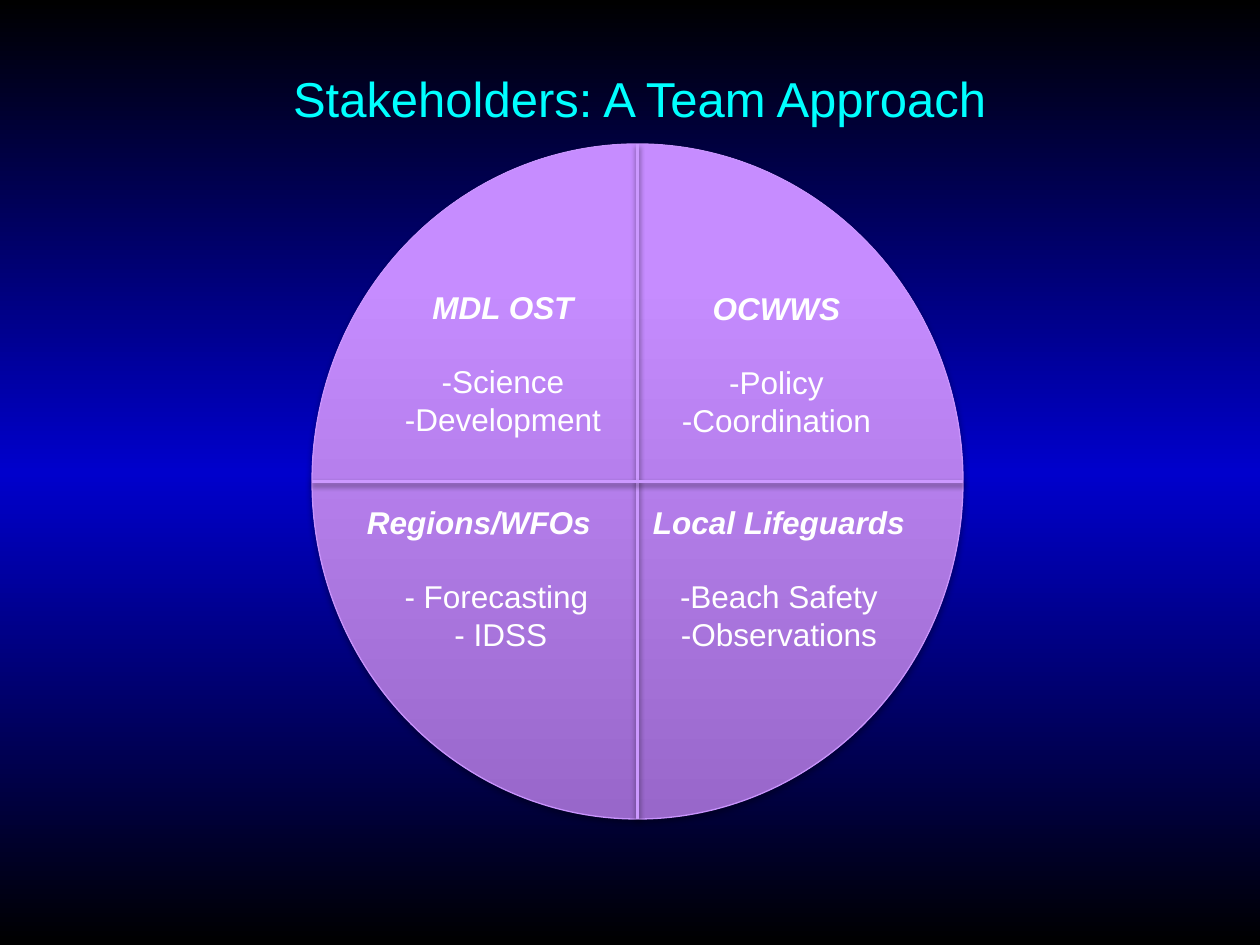
from lxml.etree import SubElement
from pptx import Presentation
from pptx.dml.color import RGBColor
from pptx.enum.shapes import MSO_CONNECTOR, MSO_SHAPE
from pptx.enum.text import PP_ALIGN
from pptx.oxml.ns import qn
from pptx.util import Emu, Pt

SLIDE_WIDTH, SLIDE_HEIGHT = 1260, 945
TITLE_BOX = (276, 62, 727, 72)
CIRCLE_BOX = (312, 144, 651, 675)

# Box relative to the circle, heading, then (duty, left indent in points)
STAKEHOLDERS = [
    ((57, 138, 268, 165), "MDL OST", [("-Science", 0), ("-Development", 0)]),
    ((356, 139, 217, 165), "OCWWS", [("-Policy", 0), ("-Coordination", 0)]),
    ((41, 353, 252, 199), "Regions/WFOs", [("- Forecasting", 20), ("- IDSS", 25)]),
    ((327, 353, 280, 165), "Local Lifeguards", [("-Beach Safety", 0), ("-Observations", 0)]),
]
HEADING = {"size": Pt(18), "bold": True, "italic": True}
DUTY = {"size": Pt(18), "bold": False, "italic": False}
BLANK_LINE = Pt(20.7)


def px(length):
    return Emu(round(length * 914400 / 126))


def rgb(color):
    return RGBColor.from_string(color)


def set_gradient(fill, owner, angle, stops):
    """Fill with (percent, colour) stops; owner is the element holding the fill."""
    fill.gradient()
    fill.gradient_angle = angle
    stop_list = owner.find(".//" + qn("a:gsLst"))
    for stop in list(stop_list):
        stop_list.remove(stop)
    for percent, color in stops:
        stop = SubElement(stop_list, qn("a:gs"), pos=str(percent * 1000))
        SubElement(stop, qn("a:srgbClr"), val=color)


def set_line(part, color, width):
    part.line.color.rgb = rgb(color)
    part.line.width = Pt(width)


def add_shadow(part, opacity, distance):
    effects = SubElement(part._element.spPr, qn("a:effectLst"))
    shadow = SubElement(effects, qn("a:outerShdw"), blurRad=str(Pt(3.1)),
                        dist=str(Pt(distance)), dir="5400000", rotWithShape="0")
    black = SubElement(shadow, qn("a:srgbClr"), val="000000")
    SubElement(black, qn("a:alpha"), val=str(opacity * 1000))


def add_text_frame(slide, box):
    frame = slide.shapes.add_textbox(*map(px, box)).text_frame
    frame.word_wrap = True
    return frame


def write_line(paragraph, text, color, style):
    paragraph.text = text
    paragraph.alignment = PP_ALIGN.CENTER
    paragraph.font.name = "Arial"
    paragraph.font.color.rgb = rgb(color)
    for name, value in style.items():
        setattr(paragraph.font, name, value)


def add_title(slide, box):
    frame = add_text_frame(slide, box)
    write_line(frame.paragraphs[0], "Stakeholders: A Team Approach", "00FFFF", {"size": Pt(28)})


def add_quadrant_text(slide, box, heading, duties):
    frame = add_text_frame(slide, box)
    write_line(frame.paragraphs[0], heading, "FFFFFF", HEADING)
    for index, (duty, indent) in enumerate(duties):
        paragraph = frame.add_paragraph()
        write_line(paragraph, duty, "FFFFFF", DUTY)
        if index == 0:
            paragraph.space_before = BLANK_LINE
        if indent:
            paragraph._p.get_or_add_pPr().set("marL", str(Pt(indent)))


def add_divider(slide, *ends):
    divider = slide.shapes.add_connector(MSO_CONNECTOR.STRAIGHT, *map(px, ends))
    set_line(divider, "CC99FF", 2)
    add_shadow(divider, 38, 1.6)


def add_team_circle(slide, box):
    left, top, width, height = box
    circle = slide.shapes.add_shape(MSO_SHAPE.OVAL, *map(px, box))
    set_gradient(circle.fill, circle._element.spPr, 90,
                 [(0, "9867CA"), (80, "C68CFF"), (100, "C78EFF")])
    set_line(circle, "C893FC", 0.75)
    add_shadow(circle, 35, 1.8)

    center_x, center_y = left + width / 2, top + height / 2
    add_divider(slide, center_x, top, center_x, top + height)
    add_divider(slide, left, center_y, left + width, center_y)

    for (dx, dy, text_width, text_height), heading, duties in STAKEHOLDERS:
        add_quadrant_text(slide, (left + dx, top + dy, text_width, text_height), heading, duties)


def main():
    deck = Presentation()
    deck.slide_width, deck.slide_height = px(SLIDE_WIDTH), px(SLIDE_HEIGHT)
    slide = deck.slides.add_slide(deck.slide_layouts[6])
    set_gradient(slide.background.fill, slide.element, 270,
                 [(0, "000000"), (50, "0000CC"), (100, "000000")])
    add_title(slide, TITLE_BOX)
    add_team_circle(slide, CIRCLE_BOX)
    deck.save("out.pptx")


if __name__ == "__main__":
    main()
